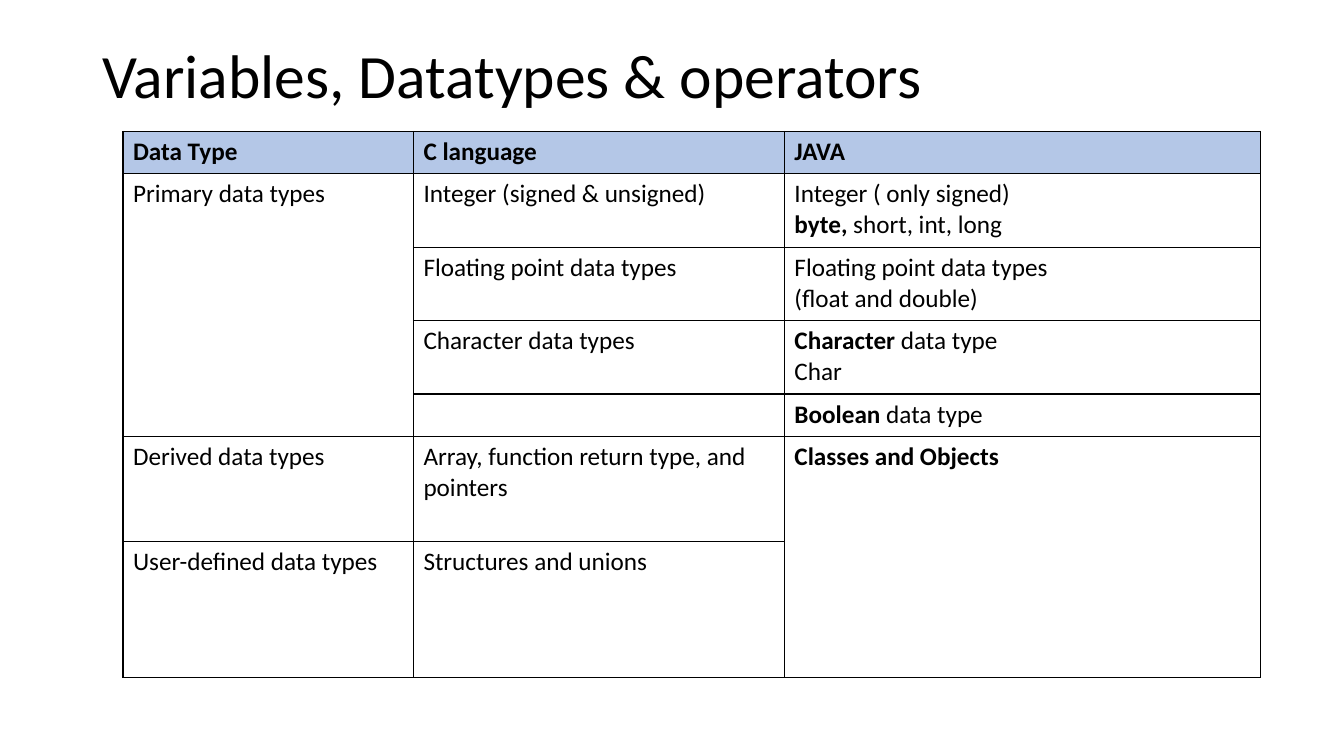
from dataclasses import dataclass

from lxml.etree import SubElement
from pptx import Presentation
from pptx.dml.color import RGBColor as Rgb
from pptx.enum.text import MSO_ANCHOR as Anchor
from pptx.oxml.ns import qn
from pptx.util import Cm, Pt


@dataclass(frozen=True)
class Theme:
    """Colours, font and type sizes of the slide."""
    font: str = "Calibri"
    ink: str = "000000"
    header: str = "B4C7E7"
    title_size: int = 44
    body_size: int = 18
    rule_width: int = 1


THEME = Theme()
TITLE = "Variables, Datatypes & operators"
HEADINGS = ["Data Type", "C language", "JAVA"]
COLUMN_WIDTHS = [7.32, 9.35, 11.99]
ROW_HEIGHTS = [1.07, 1.85, 1.85, 1.85, 1.07, 2.64, 3.43]
MERGES = [((1, 0), (4, 0)), ((5, 2), (6, 2))]


def plain(*lines):
    """Return one regular run per line."""
    return [[(line, False)] for line in lines]


def lead(bold, rest=""):
    """Return a line that opens in bold."""
    return [(bold, True)] + ([(rest, False)] if rest else [])


DATA_TYPES = [
    [[lead(heading)] for heading in HEADINGS],
    [plain("Primary data types"), plain("Integer (signed & unsigned)"),
     plain("Integer ( only signed)") + [lead("byte,", " short, int, long")]],
    [[], plain("Floating point data types"),
     plain("Floating point data types", "(float and double)")],
    [[], plain("Character data types"),
     [lead("Character", " data type")] + plain("Char")],
    [[], [], [lead("Boolean", " data type")]],
    [plain("Derived data types"),
     plain("Array, function return type, and pointers"),
     [lead("Classes and Objects")]],
    [plain("User-defined data types"), plain("Structures and unions"), []],
]


def add_run(paragraph, text, size, bold=False):
    """Append one styled run to a paragraph."""
    run = paragraph.add_run()
    run.text = text
    run.font.name = THEME.font
    run.font.size = Pt(size)
    run.font.bold = bold
    run.font.color.rgb = Rgb.from_string(THEME.ink)


def write_lines(frame, lines):
    """Write each line as a paragraph of the frame."""
    for index, line in enumerate(lines):
        paragraph = frame.add_paragraph() if index else frame.paragraphs[0]
        for text, bold in line:
            add_run(paragraph, text, THEME.body_size, bold)


def rule_cell(cell):
    """Draw a thin line along the four sides of a cell."""
    properties = cell._tc.get_or_add_tcPr()
    for position, side in enumerate(("lnL", "lnR", "lnT", "lnB")):
        line = properties.makeelement(qn(f"a:{side}"), {"w": str(Pt(THEME.rule_width))})
        properties.insert(position, line)
        fill = SubElement(line, qn("a:solidFill"))
        SubElement(fill, qn("a:srgbClr"), val=THEME.ink)


def add_title(slide, left, top, width, height):
    """Place the slide title in the given box."""
    heading = slide.shapes.add_textbox(left, top, width, height).text_frame
    heading.word_wrap = True
    heading.vertical_anchor = Anchor.MIDDLE
    heading.paragraphs[0].line_spacing = 0.9
    add_run(heading.paragraphs[0], TITLE, THEME.title_size)


def add_comparison(slide, left, top, width, height):
    """Place the data type comparison in the given box."""
    comparison = slide.shapes.add_table(
        len(DATA_TYPES), len(HEADINGS), left, top, width, height).table
    for column, share in zip(comparison.columns, COLUMN_WIDTHS):
        column.width = int(width * share / sum(COLUMN_WIDTHS))
    for row, share in zip(comparison.rows, ROW_HEIGHTS):
        row.height = int(height * share / sum(ROW_HEIGHTS))
    for row_index, entries in enumerate(DATA_TYPES):
        for column_index, lines in enumerate(entries):
            cell = comparison.cell(row_index, column_index)
            if row_index:
                cell.fill.background()
            else:
                cell.fill.solid()
                cell.fill.fore_color.rgb = Rgb.from_string(THEME.header)
            rule_cell(cell)
            write_lines(cell.text_frame, lines)
    for first, last in MERGES:
        comparison.cell(*first).merge(comparison.cell(*last))


def main():
    """Build and save the slide."""
    deck = Presentation()
    deck.slide_width, deck.slide_height = Cm(33.87), Cm(19.05)
    slide = deck.slides.add_slide(deck.slide_layouts[6])
    add_title(slide, Cm(2.33), Cm(1.02), Cm(29.21), Cm(1.93))
    add_comparison(slide, Cm(3.1), Cm(3.31), Cm(28.66), Cm(13.76))
    deck.save("out.pptx")


if __name__ == "__main__":
    main()
